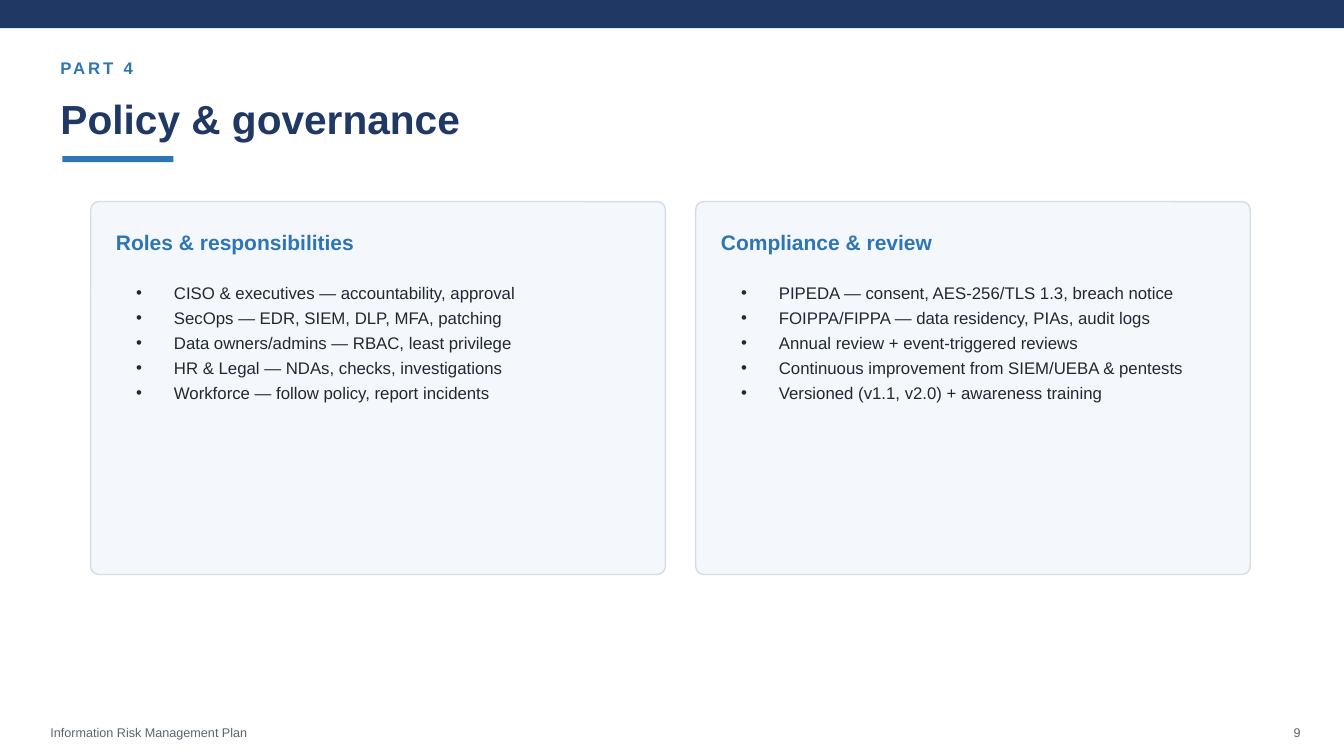
from dataclasses import dataclass

from lxml.etree import SubElement
from pptx import Presentation
from pptx.dml.color import RGBColor
from pptx.enum.shapes import MSO_SHAPE
from pptx.enum.text import MSO_ANCHOR, MSO_AUTO_SIZE, PP_ALIGN
from pptx.oxml.ns import qn
from pptx.util import Pt


@dataclass(frozen=True)
class Theme:
    font: str = "Arial"
    navy: str = "1F3864"
    blue: str = "2E75B6"
    ink: str = "222833"
    grey: str = "5B6472"
    card_fill: str = "F4F7FC"
    card_line: str = "D5DCE6"
    title_size: float = 29
    heading_size: float = 15
    body_size: float = 12
    footer_size: float = 9


THEME = Theme()
SLIDE_WIDTH, SLIDE_HEIGHT = 959.76, 540
CARD_TOP, CARD_HEIGHT = 144, 266.4
BULLET_INDENT = 27

COLUMNS = [
    (64.8, 410.4, "Roles & responsibilities", [
        "CISO & executives — accountability, approval",
        "SecOps — EDR, SIEM, DLP, MFA, patching",
        "Data owners/admins — RBAC, least privilege",
        "HR & Legal — NDAs, checks, investigations",
        "Workforce — follow policy, report incidents",
    ]),
    (496.8, 396, "Compliance & review", [
        "PIPEDA — consent, AES-256/TLS 1.3, breach notice",
        "FOIPPA/FIPPA — data residency, PIAs, audit logs",
        "Annual review + event-triggered reviews",
        "Continuous improvement from SIEM/UEBA & pentests",
        "Versioned (v1.1, v2.0) + awareness training",
    ]),
]


def add_bullet(paragraph):
    properties = paragraph._p.get_or_add_pPr()
    properties.set("marL", str(Pt(BULLET_INDENT)))
    properties.set("indent", str(-Pt(BULLET_INDENT)))
    SubElement(properties, qn("a:buChar"), char="•")


def write_text(holder, lines, *, size, color, bold=False, align=PP_ALIGN.LEFT,
               anchor=MSO_ANCHOR.MIDDLE, inset=0, line_spacing=1, tracking=0,
               bulleted=False):
    frame = holder.text_frame
    frame.word_wrap = True
    frame.auto_size = MSO_AUTO_SIZE.NONE
    frame.vertical_anchor = anchor
    frame.margin_left = frame.margin_right = Pt(inset)
    frame.margin_top = frame.margin_bottom = Pt(inset)
    frame.text = "\n".join(lines)
    for paragraph in frame.paragraphs:
        if bulleted:
            add_bullet(paragraph)
        paragraph.alignment = align
        paragraph.line_spacing = line_spacing
        paragraph.space_before = Pt(0)
        for run in paragraph.runs:
            run.font.name = THEME.font
            run.font.size = Pt(size)
            run.font.bold = bold
            run.font.color.rgb = RGBColor.from_string(color)
            if tracking:
                run.font._element.set("spc", str(tracking * 100))


def place(placeholder, left, top, width, height):
    placeholder.left, placeholder.top = Pt(left), Pt(top)
    placeholder.width, placeholder.height = Pt(width), Pt(height)
    placeholder.element.getparent().append(placeholder.element)
    return placeholder


def add_label(slide, text, left, top, width, height, **style):
    label = slide.shapes.add_textbox(Pt(left), Pt(top), Pt(width), Pt(height))
    write_text(label, [text], **style)


def add_panel(slide, kind, left, top, width, height, fill):
    panel = slide.shapes.add_shape(kind, Pt(left), Pt(top), Pt(width), Pt(height))
    panel.shadow.inherit = False
    panel.fill.solid()
    panel.fill.fore_color.rgb = RGBColor.from_string(fill)
    panel.line.fill.background()
    return panel


def add_card(slide, left, width, heading, heading_text, body, items):
    card = add_panel(slide, MSO_SHAPE.ROUNDED_RECTANGLE, left, CARD_TOP,
                     width, CARD_HEIGHT, THEME.card_fill)
    card.adjustments[0] = 0.022
    card.line.color.rgb = RGBColor.from_string(THEME.card_line)
    card.line.width = Pt(1)
    place(heading, left + 18, CARD_TOP + 20.88, width - 36, 16.56)
    write_text(heading, [heading_text], size=THEME.heading_size,
               color=THEME.blue, bold=True)
    place(body, left + 28.8, CARD_TOP + 50.4, width - 50.4, 90.72)
    write_text(body, items, size=THEME.body_size, color=THEME.ink,
               anchor=MSO_ANCHOR.TOP, inset=3.6, line_spacing=1.25, bulleted=True)


def main():
    deck = Presentation()
    deck.slide_width, deck.slide_height = Pt(SLIDE_WIDTH), Pt(SLIDE_HEIGHT)
    comparison = deck.slide_layouts.get_by_name("Comparison")
    slide = deck.slides.add_slide(comparison)
    title, *column_holders = slide.placeholders

    add_panel(slide, MSO_SHAPE.RECTANGLE, 0, 0, SLIDE_WIDTH, 20.16, THEME.navy)
    add_label(slide, "PART 4", 43.2, 41.76, 864, 13.68, size=THEME.body_size,
              color=THEME.blue, bold=True, tracking=2)
    place(title, 43.2, 68.4, 871.2, 32.4)
    write_text(title, ["Policy & governance"], size=THEME.title_size,
               color=THEME.navy, bold=True)
    add_panel(slide, MSO_SHAPE.RECTANGLE, 44.64, 111.6, 79.2, 4.32, THEME.blue)

    holder_pairs = zip(column_holders[::2], column_holders[1::2])
    for (left, width, heading_text, items), (heading, body) in zip(COLUMNS, holder_pairs):
        add_card(slide, left, width, heading, heading_text, body, items)

    footer_style = {"size": THEME.footer_size, "color": THEME.grey}
    add_label(slide, "Information Risk Management Plan", 36, 518.4, 720, 10.08,
              **footer_style)
    add_label(slide, "9", 892.8, 518.4, 36, 10.08, align=PP_ALIGN.RIGHT,
              **footer_style)
    deck.save("out.pptx")


if __name__ == "__main__":
    main()
